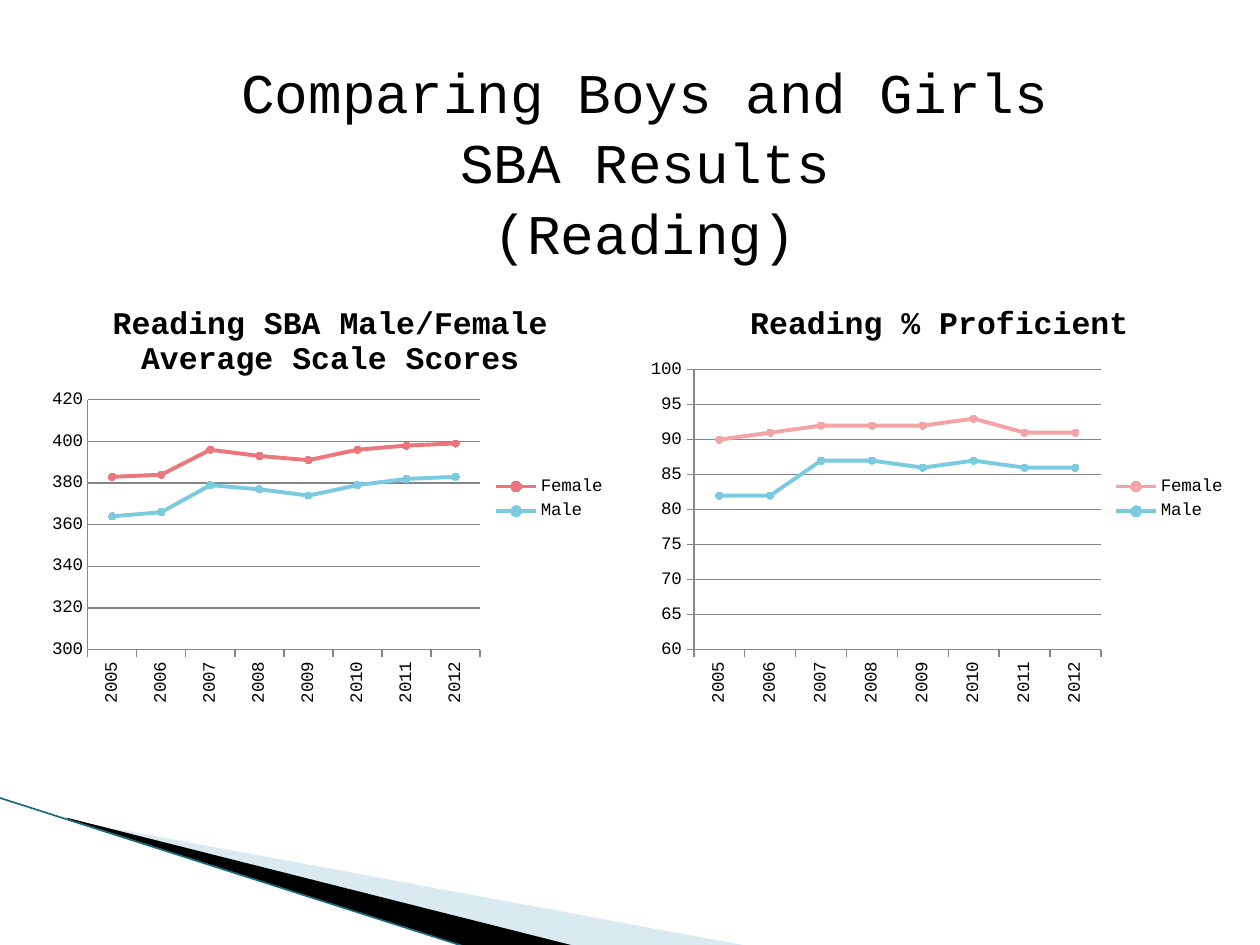
from dataclasses import dataclass

from lxml.etree import SubElement
from pptx import Presentation
from pptx.chart.data import CategoryChartData
from pptx.dml.color import RGBColor
from pptx.enum.chart import XL_CHART_TYPE, XL_LEGEND_POSITION, XL_MARKER_STYLE, XL_TICK_MARK
from pptx.enum.shapes import MSO_CONNECTOR
from pptx.enum.text import PP_ALIGN
from pptx.oxml import parse_xml
from pptx.oxml.ns import nsdecls, qn
from pptx.util import Inches, Pt


@dataclass(frozen=True)
class Theme:
    font: str = "Courier New"
    text: str = "000000"
    grid: str = "868686"
    pale: str = "A0CBDC"
    edge: str = "1A6B80"
    female: str = "EC767C"
    female_light: str = "F2A4A7"
    male: str = "7ACBE0"
    title_size: float = 32
    chart_title_size: float = 18
    label_size: float = 10


@dataclass(frozen=True)
class Wedge:
    points: tuple
    color: str
    opacity: int = 100


@dataclass(frozen=True)
class ScorePanel:
    title: str
    left: float
    width: float
    plot: tuple  # x, y, width and height as shares of the chart
    scale: tuple  # minimum, maximum and step
    tick: XL_TICK_MARK
    female: tuple
    male: tuple
    female_color: str
    light_points: tuple = ()


THEME = Theme()
YEARS = [str(year) for year in range(2005, 2013)]

WEDGES = (
    Wedge(((0.55, 6.51), (5.95, 7.51), (4.56, 7.51), (0.55, 6.5)), THEME.pale, 40),
    Wedge(((0.53, 6.49), (4.57, 7.51), (3.72, 7.52), (0.54, 6.5)), THEME.text),
)

PANELS = (
    ScorePanel("Reading SBA Male/Female Average Scale Scores", 0.33, 4.58,
               (0.08, 0.27, 0.68, 0.58), (300, 420, 20), XL_TICK_MARK.NONE,
               (383, 384, 396, 393, 391, 396, 398, 399),
               (364, 366, 379, 377, 374, 379, 382, 383),
               THEME.female, light_points=(5,)),
    ScorePanel("Reading % Proficient", 5.08, 4.75,
               (0.09, 0.2, 0.68, 0.65), (60, 100, 5), XL_TICK_MARK.OUTSIDE,
               (90, 91, 92, 92, 92, 93, 91, 91),
               (82, 82, 87, 87, 86, 87, 86, 86),
               THEME.female_light),
)


def rgb(color: str) -> RGBColor:
    return RGBColor.from_string(color)


def style_font(font, size: float, bold: bool = False) -> None:
    font.name = THEME.font
    font.size = Pt(size)
    font.bold = bold
    font.color.rgb = rgb(THEME.text)


def style_line(line, color: str, width: float) -> None:
    line.color.rgb = rgb(color)
    line.width = Pt(width)


def fill_solid(fill, color: str) -> None:
    fill.solid()
    fill.fore_color.rgb = rgb(color)


def add_wedge(slide, wedge: Wedge) -> None:
    points = [(Inches(x), Inches(y)) for x, y in wedge.points]
    builder = slide.shapes.build_freeform(*points[0])
    builder.add_line_segments(points[1:], close=True)
    shape = builder.convert_to_shape()
    shape.shadow.inherit = False
    shape.line.fill.background()
    fill_solid(shape.fill, wedge.color)
    if wedge.opacity < 100:
        color = shape.fill._xPr.find(qn("a:solidFill"))[0]
        SubElement(color, qn("a:alpha")).set("val", str(wedge.opacity * 1000))


def add_edge(slide) -> None:
    connector = slide.shapes.add_connector(
        MSO_CONNECTOR.STRAIGHT, Inches(-0.01), Inches(6.33), Inches(3.71), Inches(7.52))
    style_line(connector.line, THEME.edge, 0.95)
    SubElement(connector._element.spPr, qn("a:effectLst"))


def add_title(slide, lines: tuple) -> None:
    box = slide.shapes.add_textbox(Inches(1.58), Inches(0.38), Inches(7.08), Inches(1.18))
    frame = box.text_frame
    frame.word_wrap = True
    for index, line in enumerate(lines):
        paragraph = frame.add_paragraph() if index else frame.paragraphs[0]
        paragraph.alignment = PP_ALIGN.CENTER
        paragraph.line_spacing = 1.05
        run = paragraph.add_run()
        run.text = line
        style_font(run.font, THEME.title_size)


def set_plot_layout(chart, plot: tuple) -> None:
    shares = "".join(f'<c:{key} val="{value}"/>' for key, value in zip("xywh", plot))
    layout = parse_xml(
        f'<c:layout {nsdecls("c")}><c:manualLayout><c:layoutTarget val="inner"/>'
        f'<c:xMode val="edge"/><c:yMode val="edge"/>{shares}</c:manualLayout></c:layout>')
    plot_area = chart._chartSpace.chart.plotArea
    for old in plot_area.findall(qn("c:layout")):
        plot_area.remove(old)
    plot_area.insert(0, layout)


def style_axes(chart, panel: ScorePanel) -> None:
    values, categories = chart.value_axis, chart.category_axis
    values.minimum_scale, values.maximum_scale, values.major_unit = panel.scale
    values.major_tick_mark = panel.tick
    values.has_major_gridlines = True
    style_line(values.major_gridlines.format.line, THEME.grid, 0.75)
    categories.major_tick_mark = XL_TICK_MARK.OUTSIDE
    for axis in (values, categories):
        style_line(axis.format.line, THEME.grid, 0.75)
        style_font(axis.tick_labels.font, THEME.label_size)
    body = categories._element.find(qn("c:txPr")).find(qn("a:bodyPr"))
    body.set("rot", "-5400000")
    body.set("vert", "horz")


def style_marker(marker, color: str) -> None:
    marker.style = XL_MARKER_STYLE.CIRCLE
    marker.size = 4
    fill_solid(marker.format.fill, color)
    style_line(marker.format.line, color, 0.75)


def add_panel(slide, panel: ScorePanel) -> None:
    data = CategoryChartData()
    data.categories = YEARS
    data.add_series("Female", panel.female)
    data.add_series("Male", panel.male)
    chart = slide.shapes.add_chart(
        XL_CHART_TYPE.LINE_MARKERS, Inches(panel.left), Inches(2.25),
        Inches(panel.width), Inches(3.42), data).chart
    style_font(chart.font, THEME.label_size)

    # Title and legend
    chart.has_title = True
    run = chart.chart_title.text_frame.paragraphs[0].add_run()
    run.text = panel.title
    style_font(run.font, THEME.chart_title_size, bold=True)
    chart.has_legend = True
    chart.legend.position = XL_LEGEND_POSITION.RIGHT
    chart.legend.include_in_layout = False
    style_font(chart.legend.font, THEME.label_size)

    # Axes and series
    set_plot_layout(chart, panel.plot)
    style_axes(chart, panel)
    chart.plots[0].vary_by_categories = False
    for series, color in zip(chart.plots[0].series, (panel.female_color, THEME.male)):
        series.smooth = False
        style_line(series.format.line, color, 2.25)
        style_marker(series.marker, color)
    female = chart.plots[0].series[0]
    for index in panel.light_points:
        point = female.points[index]
        style_marker(point.marker, THEME.female_light)
        style_line(point.format.line, panel.female_color, 2.25)


def main() -> None:
    presentation = Presentation()
    presentation.slide_width, presentation.slide_height = Inches(10), Inches(7.5)
    slide = presentation.slides.add_slide(presentation.slide_layouts[6])
    # Corner decoration
    for wedge in WEDGES:
        add_wedge(slide, wedge)
    add_edge(slide)
    # Charts and heading
    for panel in PANELS:
        add_panel(slide, panel)
    add_title(slide, ("Comparing Boys and Girls SBA Results", "(Reading)"))
    presentation.save("out.pptx")


if __name__ == "__main__":
    main()
